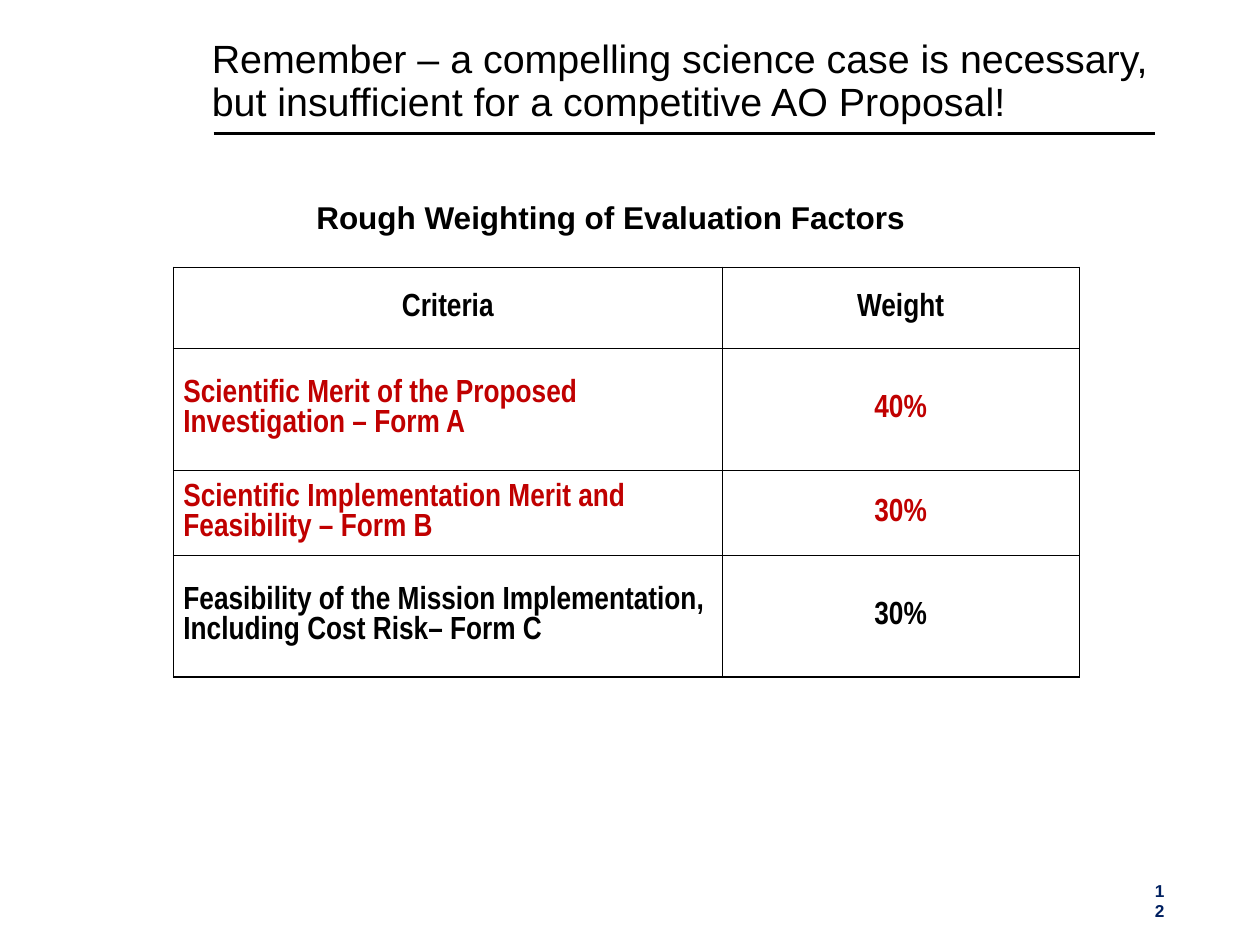
from dataclasses import dataclass

from lxml import etree
from pptx import Presentation
from pptx.dml.color import RGBColor
from pptx.enum.shapes import MSO_CONNECTOR
from pptx.enum.text import MSO_ANCHOR, MSO_AUTO_SIZE, PP_ALIGN
from pptx.oxml.ns import qn
from pptx.slide import Slide
from pptx.table import _Cell
from pptx.text.text import TextFrame
from pptx.util import Inches, Pt

LEFT, MID, RIGHT = PP_ALIGN.LEFT, PP_ALIGN.CENTER, PP_ALIGN.RIGHT
TOP, CENTER = MSO_ANCHOR.TOP, MSO_ANCHOR.MIDDLE
FIXED, GROW = MSO_AUTO_SIZE.NONE, MSO_AUTO_SIZE.SHAPE_TO_FIT_TEXT
STRAIGHT = MSO_CONNECTOR.STRAIGHT


@dataclass(frozen=True)
class Theme:
    """Colours, fonts and type sizes of the slide."""
    black: str = "000000"
    white: str = "FFFFFF"
    red: str = "C00000"
    navy: str = "002060"
    sans: str = "Arial"
    narrow: str = "Arial Narrow"
    title: float = 32
    head: float = 25.6
    cell: float = 26
    page: float = 14
    rule: float = 2
    edge: float = 1.5
    grid: float = 1


THEME = Theme()


@dataclass(frozen=True)
class Style:
    """Look of one piece of text."""
    size: float
    color: str = THEME.black
    name: str = THEME.sans
    bold: bool = True
    align: PP_ALIGN = LEFT
    space: float = 1.0


@dataclass(frozen=True)
class Label:
    """A text box with its place and style."""
    text: str
    area: tuple[float, float, float, float]
    style: Style
    anchor: MSO_ANCHOR = CENTER
    inset: float = 0.1
    fit: MSO_AUTO_SIZE = GROW


@dataclass(frozen=True)
class Factor:
    """A table row: a criterion and its weight."""
    name: str
    weight: str
    height: float
    color: str = THEME.black
    filled: bool = False
    align: PP_ALIGN = LEFT


LABELS = [
    Label("Remember – a compelling science case is necessary, "
          "but insufficient for a competitive AO Proposal!",
          (2.34, 0.39, 10.75, 1.08),
          Style(THEME.title, bold=False, space=0.9), inset=0.05, fit=FIXED),
    Label("12", (12.88, 10, 0.36, 0.34),
          Style(THEME.page, THEME.navy, align=RIGHT)),
    Label("Rough Weighting of Evaluation Factors", (3.38, 2.19, 7.02, 0.53),
          Style(THEME.head, align=MID), TOP),
]
FACTORS = [
    Factor("Criteria", "Weight", 0.92, align=MID),
    Factor("Scientific Merit of the Proposed Investigation – Form A",
           "40%", 1.37, THEME.red, True),
    Factor("Scientific Implementation Merit and Feasibility – Form B",
           "30%", 0.96, THEME.red, True),
    Factor("Feasibility of the Mission Implementation, "
           "Including Cost Risk– Form C", "30%", 1.37),
]
WIDTHS = (6.19, 4.03)


def write(frame: TextFrame, text: str, style: Style) -> None:
    """Put styled text in the first paragraph of a frame."""
    para = frame.paragraphs[0]
    para.alignment = style.align
    para.line_spacing = style.space
    run = para.add_run()
    run.text = text
    look = {"name": style.name, "size": Pt(style.size), "bold": style.bold}
    for key, value in look.items():
        setattr(run.font, key, value)
    run.font.color.rgb = RGBColor.from_string(style.color)


def add_label(slide: Slide, label: Label) -> None:
    """Draw a text box."""
    box = slide.shapes.add_textbox(*map(Inches, label.area))
    look = {
        "word_wrap": True, "auto_size": label.fit,
        "vertical_anchor": label.anchor,
        "margin_left": Inches(label.inset), "margin_right": Inches(label.inset),
        "margin_top": Inches(0.05), "margin_bottom": Inches(0.05),
    }
    for key, value in look.items():
        setattr(box.text_frame, key, value)
    write(box.text_frame, label.text, label.style)


def add_rule(slide: Slide) -> None:
    """Draw the line under the title."""
    rule = slide.shapes.add_connector(
        STRAIGHT, *map(Inches, (2.41, 1.51, 13.04, 1.51)))
    rule.line.width = Pt(THEME.rule)
    rule.line.color.rgb = RGBColor.from_string(THEME.black)
    etree.SubElement(rule._element.spPr, qn("a:effectLst"))


def add_edges(cell: _Cell, edges: dict[str, float]) -> None:
    """Give a cell its four borders."""
    props = cell._tc.get_or_add_tcPr()
    for side, width in edges.items():
        line = etree.SubElement(props, qn(f"a:ln{side}"), w=str(Pt(width)))
        fill = etree.SubElement(line, qn("a:solidFill"))
        etree.SubElement(fill, qn("a:srgbClr"), val=THEME.black)


def add_table(slide: Slide, factors: list[Factor]) -> None:
    """Draw the table of weights."""
    height = sum(factor.height for factor in factors)
    area = (1.96, 3.02, sum(WIDTHS), height)
    table = slide.shapes.add_table(
        len(factors), len(WIDTHS), *map(Inches, area)).table
    table.first_row = table.horz_banding = False
    for column, width in zip(table.columns, WIDTHS):
        column.width = Inches(width)
    last = len(factors) - 1
    look = {
        "vertical_anchor": CENTER,
        "margin_left": Inches(0.11), "margin_right": Inches(0.11),
        "margin_top": Inches(0.05), "margin_bottom": Inches(0.05),
    }
    for row, factor in enumerate(factors):
        table.rows[row].height = Inches(factor.height)
        parts = ((factor.name, factor.align), (factor.weight, MID))
        for col, (text, align) in enumerate(parts):
            cell = table.cell(row, col)
            for key, value in look.items():
                setattr(cell, key, value)
            add_edges(cell, {
                "L": THEME.edge if col == 0 else THEME.grid,
                "R": THEME.grid,
                "T": THEME.edge if row == 0 else THEME.grid,
                "B": THEME.edge if row == last else THEME.grid,
            })
            if factor.filled:
                cell.fill.solid()
                cell.fill.fore_color.rgb = RGBColor.from_string(THEME.white)
            else:
                cell.fill.background()
            write(cell.text_frame, text,
                  Style(THEME.cell, factor.color, THEME.narrow, align=align))


def main() -> None:
    """Build and save the slide."""
    deck = Presentation()
    deck.slide_width, deck.slide_height = Inches(14.22), Inches(10.67)
    slide = deck.slides.add_slide(deck.slide_layouts[6])
    add_rule(slide)
    for label in LABELS:
        add_label(slide, label)
    add_table(slide, FACTORS)
    deck.save("out.pptx")


if __name__ == "__main__":
    main()
